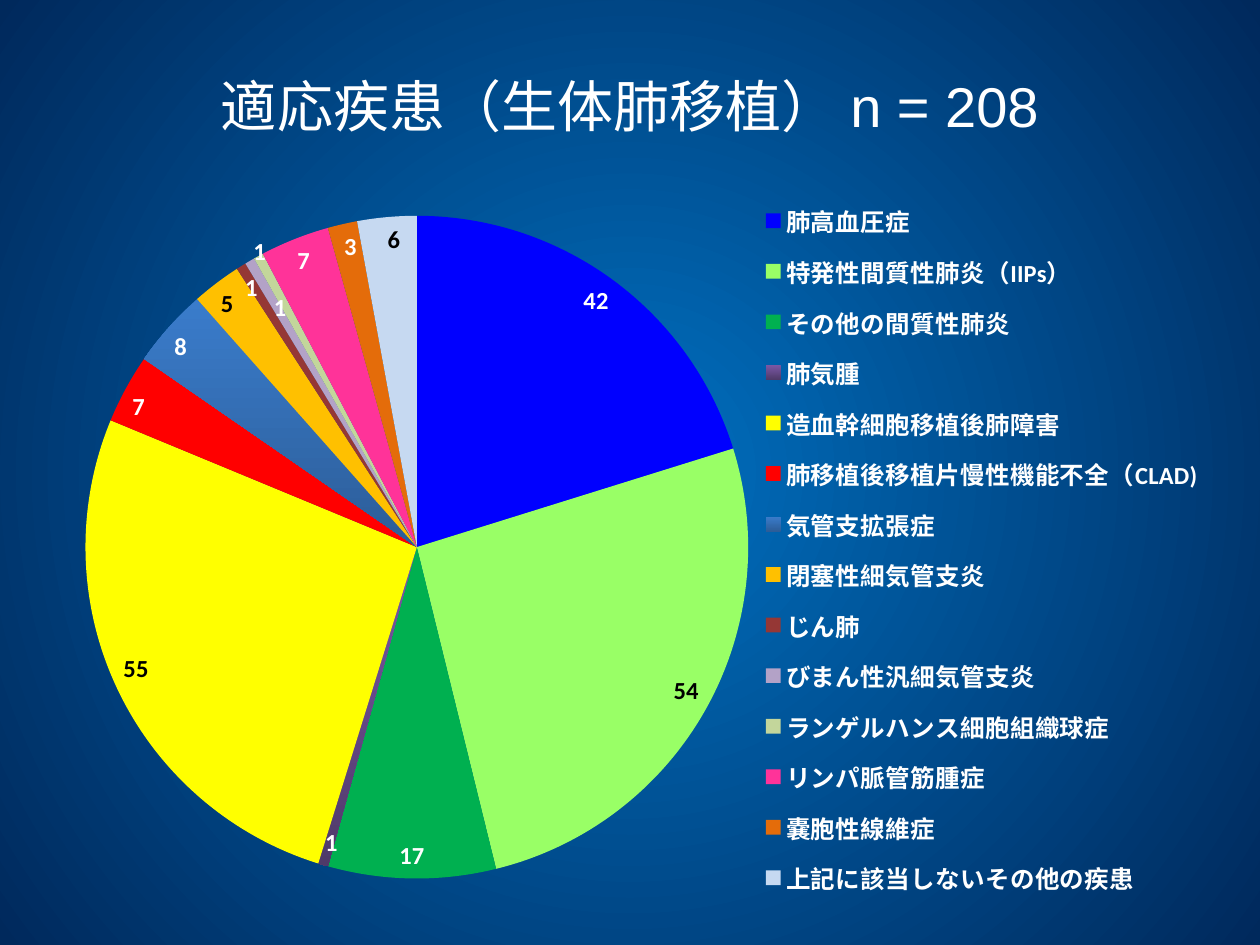
from pptx import Presentation
from pptx import util as u
from pptx.chart import data as cd
from pptx.dml import color
from pptx.enum import chart as ec, text
from pptx.oxml import parse_xml
from pptx.oxml import ns

HUES = {
    "white": "FFFFFF", "black": "000000",
    "glow": "0070C0", "navy": "00295C",
}

# Disease, cases, slice colours (two make a gradient), label colour
ROWS = [
    ("肺高血圧症", 42, ["0000FF"], "white"),
    ("特発性間質性肺炎（IIPs）", 54, ["99FF66"], "black"),
    ("その他の間質性肺炎", 17, ["00B050"], "white"),
    ("肺気腫", 1, ["7B58A6", "4F3A69"], "white"),
    ("造血幹細胞移植後肺障害", 55, ["FFFF00"], "black"),
    ("肺移植後移植片慢性機能不全（CLAD)", 7, ["FF0000"], "white"),
    ("気管支拡張症", 8, ["3A7CCB", "2C5D98"], "white"),
    ("閉塞性細気管支炎", 5, ["FFC000"], "black"),
    ("じん肺", 1, ["953735"], "white"),
    ("びまん性汎細気管支炎", 1, ["B3A2C7"], "white"),
    ("ランゲルハンス細胞組織球症", 1, ["C3D69B"], "white"),
    ("リンパ脈管筋腫症", 7, ["FF3399"], "white"),
    ("嚢胞性線維症", 3, ["E46C0A"], "white"),
    ("上記に該当しないその他の疾患", 6, ["C6D9F1"], "black"),
]
# Labels moved apart where slices crowd, as shares of the chart
SHIFTS = {9: (0, -0.04), 10: (0.01, 0.04)}


def rgb(hue):
    return color.RGBColor.from_string(HUES.get(hue, hue))


def blend(fill, hues, angle=None):
    fill.gradient()
    for stop, hue in zip(fill.gradient_stops, hues):
        stop.color.rgb = rgb(hue)
    if angle is not None:
        fill.gradient_angle = angle


def place(node, spot, x, y, w=None, h=None, inner=False):
    """Give a chart part a manual layout as its child number spot."""
    for old in node.findall(ns.qn("c:layout")):
        node.remove(old)
    tags = []
    if inner:
        tags.append(("layoutTarget", "inner"))
    if w:
        tags += [("xMode", "edge"), ("yMode", "edge")]
    tags += [("x", x), ("y", y)]
    if w:
        tags += [("w", w), ("h", h)]
    body = "".join(f'<c:{tag} val="{val}"/>' for tag, val in tags)
    node.insert(spot, parse_xml(
        f'<c:layout {ns.nsdecls("c")}><c:manualLayout>{body}'
        '</c:manualLayout></c:layout>'))


class Deck:
    def __init__(self, wide, high):
        self.prs = Presentation()
        self.prs.slide_width = u.Inches(wide)
        self.prs.slide_height = u.Inches(high)
        self.slide = self.prs.slides.add_slide(self.prs.slide_layouts[5])

    def box(self, x, y, w, h):
        wide, high = self.prs.slide_width, self.prs.slide_height
        return [int(n) for n in (x * wide, y * high, w * wide, h * high)]

    def font(self, font, face, size, hue="white", bold=False):
        font.name, font.size, font.bold = face, u.Pt(size), bold
        font.color.rgb = rgb(hue)

    def back(self, *hues):
        blend(self.slide.background.fill, hues)
        grad = self.slide.element.find(".//" + ns.qn("a:gradFill"))
        grad.remove(grad.find(ns.qn("a:lin")))
        grad.insert(1, parse_xml(
            f'<a:path {ns.nsdecls("a")} path="circle"><a:fillToRect '
            'l="50000" t="50000" r="50000" b="50000"/></a:path>'))

    def title(self, words, *area):
        shape = self.slide.shapes.title
        shape.left, shape.top, shape.width, shape.height = self.box(*area)
        frame = shape.text_frame
        frame.vertical_anchor = text.MSO_ANCHOR.MIDDLE
        para = frame.paragraphs[0]
        para.alignment = text.PP_ALIGN.CENTER
        run = para.add_run()
        run.text = words
        self.font(run.font, "Arial", 32)

    def pie(self, rows, *area):
        data = cd.CategoryChartData()
        data.categories = [row[0] for row in rows]
        data.add_series("Series 1", [row[1] for row in rows])
        chart = self.slide.shapes.add_chart(
            ec.XL_CHART_TYPE.PIE, *self.box(*area), data).chart
        chart.has_title = False
        self.font(chart.font, "Calibri", 10)

        # Legend
        chart.has_legend = True
        key = chart.legend
        key.position = ec.XL_LEGEND_POSITION.RIGHT
        key.include_in_layout = False
        self.font(key.font, "Calibri", 14, bold=True)
        place(key._element, 1, 0.6, 0.03, 0.39, 0.96)

        # Slices and their labels
        plot = chart.plots[0]
        plot.vary_by_categories = True
        series = plot.series[0]
        end = ec.XL_LABEL_POSITION.INSIDE_END
        tags = series.data_labels
        tags.show_value, tags.position = True, end
        self.font(tags.font, "Calibri", 14, bold=True)
        for i, (_, _, hues, ink) in enumerate(rows):
            point = series.points[i]
            fill = point.format.fill
            if len(hues) > 1:
                blend(fill, hues, 270)
            else:
                fill.solid()
                fill.fore_color.rgb = rgb(hues[0])
            self.font(point.data_label.font, "Calibri", 14, ink, True)
            point.data_label.position = end

        root = chart.element
        for i, (x, y) in SHIFTS.items():
            place(root.xpath(f'.//c:dLbl[c:idx/@val="{i}"]')[0], 1, x, y)
        place(root.find(".//" + ns.qn("c:plotArea")), 0,
              0.042, 0.067, 0.557, 0.88, inner=True)


def main():
    deck = Deck(10, 7.5)
    deck.back("glow", "navy")
    deck.title("適応疾患（生体肺移植） n = 208", 0.126, 0.059, 0.748, 0.105)
    deck.pie(ROWS, 0.028, 0.175, 0.945, 0.797)
    deck.prs.save("out.pptx")


if __name__ == "__main__":
    main()
